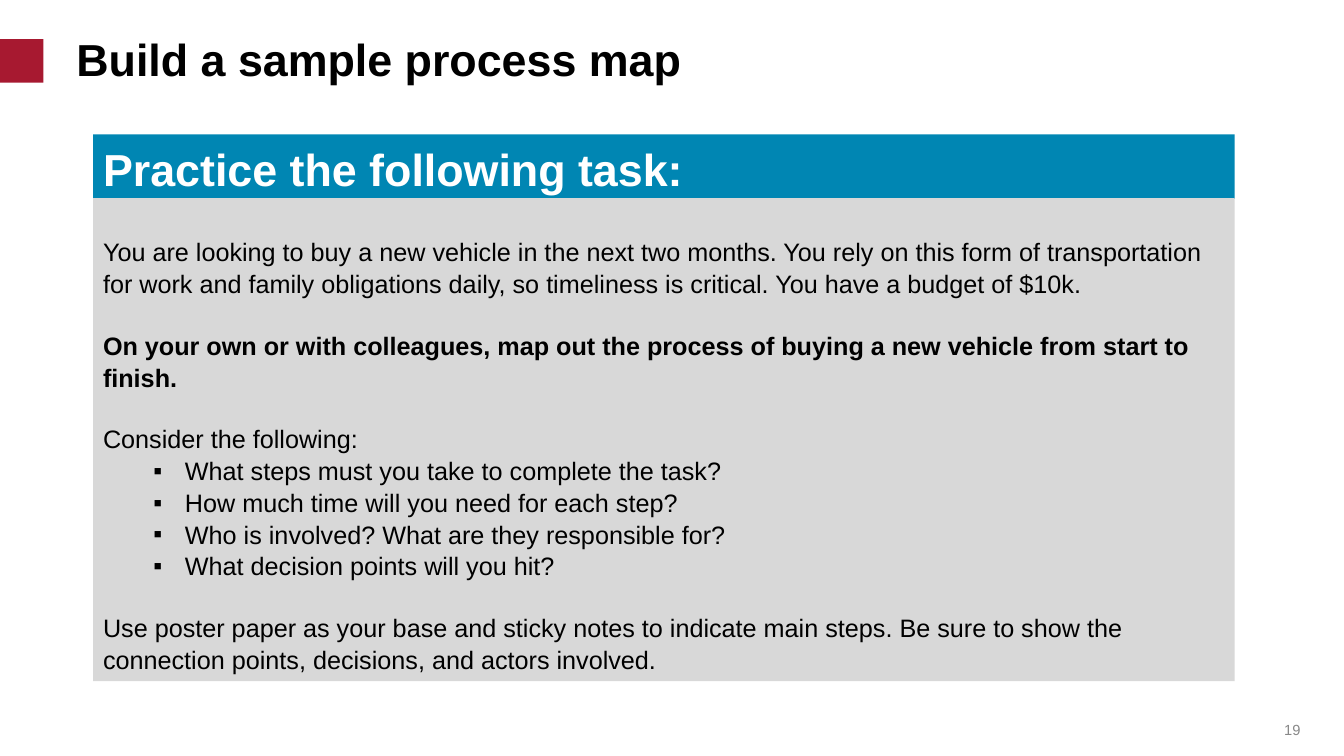
from lxml import etree
from pptx import Presentation
from pptx.dml.color import RGBColor
from pptx.enum import shapes, text
from pptx.oxml import ns
from pptx.util import Pt

COLORS = {
    "red": "A71930",
    "blue": "0086B3",
    "panel": "D8D8D8",
    "black": "000000",
    "white": "FFFFFF",
    "gray": "888888",
}
LEFT, WIDTH = 66.5, 815.5
LINE_SPACING = 1.05
GAP = 21.6

INTRO = (
    "You are looking to buy a new vehicle in the next two months. "
    "You rely on this form of transportation for work and family "
    "obligations daily, so timeliness is critical. You have a budget of $10k."
)
TASK = (
    "On your own or with colleagues, map out the process of buying "
    "a new vehicle from start to finish."
)
QUESTIONS = [
    "What steps must you take to complete the task?",
    "How much time will you need for each step?",
    "Who is involved? What are they responsible for?",
    "What decision points will you hit?",
]
CLOSING = (
    "Use poster paper as your base and sticky notes to indicate main steps. "
    "Be sure to show the connection points, decisions, and actors involved."
)


def color(name):
    return RGBColor.from_string(COLORS[name])


def add_block(page, left, top, width, height, fill):
    block = page.shapes.add_shape(
        shapes.MSO_SHAPE.RECTANGLE, Pt(left), Pt(top), Pt(width), Pt(height)
    )
    block.shadow.inherit = False
    block.fill.solid()
    block.fill.fore_color.rgb = color(fill)
    block.line.fill.background()
    return block


def add_text_box(page, left, top, width, height):
    return page.shapes.add_textbox(Pt(left), Pt(top), Pt(width), Pt(height))


def set_frame(box, anchor, top_inset=3.6):
    frame = box.text_frame
    frame.word_wrap = True
    frame.vertical_anchor = anchor
    frame.margin_top = Pt(top_inset)
    return frame


def write(para, words, size, ink, bold=False, align=text.PP_ALIGN.LEFT):
    para.text = words
    para.alignment = align
    para.line_spacing = LINE_SPACING
    for span in para.runs:
        span.font.name = "Arial"
        span.font.size = Pt(size)
        span.font.bold = bold
        span.font.color.rgb = color(ink)


def add_bullet(para):
    para.level = 1
    props = para._p.get_or_add_pPr()
    props.set("marL", str(Pt(58.5)))
    props.set("indent", str(Pt(-22.5)))
    tint = etree.SubElement(props, ns.qn("a:buClr"))
    etree.SubElement(tint, ns.qn("a:srgbClr"), val=COLORS["black"])
    etree.SubElement(props, ns.qn("a:buFont"), typeface="Arial")
    etree.SubElement(props, ns.qn("a:buChar"), char="▪")


def add_heading(box, words, ink, top_inset):
    frame = set_frame(box, text.MSO_ANCHOR.TOP, top_inset)
    write(frame.paragraphs[0], words, 32, ink, bold=True)


def add_instructions(box):
    frame = set_frame(box, text.MSO_ANCHOR.MIDDLE, 3.6 + GAP)
    write(frame.paragraphs[0], INTRO, 18, "black")
    for words in [TASK, "Consider the following:", *QUESTIONS, CLOSING]:
        para = frame.add_paragraph()
        write(para, words, 18, "black", bold=words == TASK)
        if words in QUESTIONS:
            add_bullet(para)
        else:
            para.space_before = Pt(GAP)


def add_page_number(page, number):
    box = add_text_box(page, 882, 506, 54, 29)
    frame = set_frame(box, text.MSO_ANCHOR.MIDDLE)
    write(frame.paragraphs[0], number, 10.5, "gray", align=text.PP_ALIGN.RIGHT)


def main():
    deck = Presentation()
    deck.slide_width, deck.slide_height = Pt(960), Pt(540)
    page = deck.slides.add_slide(deck.slide_layouts[6])

    add_block(page, 0, 28, 31, 31, "red")
    add_page_number(page, "19")
    title = add_text_box(page, 47.5, 21, 864, 42.5)
    add_heading(title, "Build a sample process map", "black", 0)
    header = add_block(page, LEFT, 96, WIDTH, 46, "blue")
    add_heading(header, "Practice the following task:", "white", 3.6)
    add_instructions(add_block(page, LEFT, 141.5, WIDTH, 345, "panel"))

    deck.save("out.pptx")


if __name__ == "__main__":
    main()
